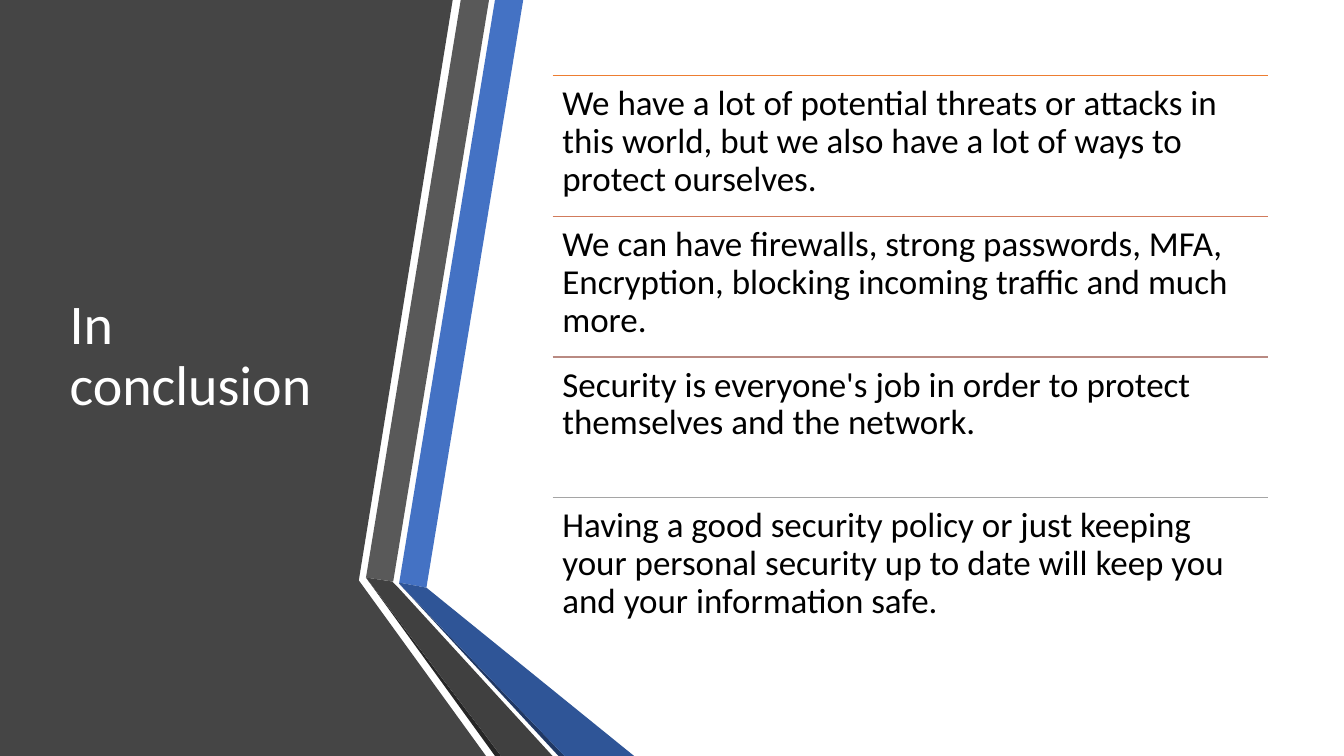
from pptx import Presentation
from pptx.dml.color import RGBColor
from pptx.enum.shapes import MSO_CONNECTOR
from pptx.enum.text import MSO_ANCHOR, MSO_AUTO_SIZE, PP_ALIGN
from pptx.oxml.ns import qn
from pptx.util import Inches, Pt
from lxml.etree import SubElement

COLORS = {
    "panel": "454545",
    "blue": "4472C4",
    "blue_fold": "2F5597",
    "blue_shade": "203864",
    "gray": "595959",
    "gray_fold": "404040",
    "gray_shade": "262626",
    "title": "FFFFFF",
    "text": "000000",
    "rule_1": "ED7D31",
    "rule_2": "D17B5C",
    "rule_3": "B98A82",
    "rule_4": "A5A5A5",
}

PANEL = [(0, 0), (4.49, 0), (3.56, 5.75), (3.56, 5.76), (4.82, 7.5), (0, 7.5)]

RIBBONS = [
    ("blue", [(0.33, 5.78), (0.6, 5.83), (1.56, 0), (1.28, 0)]),
    ("gray", [(1.22, 0), (0.94, 0), (0, 5.73), (0.27, 5.77)]),
    ("gray_shade", [(0, 5.73), (1.28, 7.5), (1.34, 7.5)]),
    ("blue_shade", [(0.33, 5.79), (1.91, 7.5), (1.97, 7.5)]),
    ("blue_fold", [(0.33, 5.79), (1.97, 7.5), (2.66, 7.5), (0.6, 5.83), (0.33, 5.78)]),
    ("gray_fold", [(1.85, 7.5), (0.32, 5.83), (0.26, 5.77), (0, 5.73), (1.34, 7.5)]),
]

CONCLUSIONS = [
    ("rule_1", "We have a lot of potential threats or attacks in this world, "
               "but we also have a lot of ways to protect ourselves."),
    ("rule_2", "We can have firewalls, strong passwords, MFA, Encryption, "
               "blocking incoming traffic and much more."),
    ("rule_3", "Security is everyone's job in order to protect themselves "
               "and the network."),
    ("rule_4", "Having a good security policy or just keeping your personal "
               "security up to date will keep you and your information safe."),
]


def color(name):
    return RGBColor.from_string(COLORS[name])


def write_text(shape, text, size, color_name, anchor, margin=None):
    frame = shape.text_frame
    frame.word_wrap = True
    frame.auto_size = MSO_AUTO_SIZE.NONE
    frame.vertical_anchor = anchor
    if margin is not None:
        frame.margin_left = frame.margin_right = Inches(margin)
        frame.margin_top = frame.margin_bottom = Inches(margin)
    paragraph = frame.paragraphs[0]
    paragraph.alignment = PP_ALIGN.LEFT
    paragraph.line_spacing = 0.9
    run = paragraph.add_run()
    run.text = text
    run.font.name = "Calibri"
    run.font.size = Pt(size)
    run.font.color.rgb = color(color_name)


def add_polygon(slide, left, top, points, color_name):
    corners = [(Inches(left + x), Inches(top + y)) for x, y in points]
    builder = slide.shapes.build_freeform(*corners[0])
    builder.add_line_segments(corners[1:], close=True)
    shape = builder.convert_to_shape()
    shape.shadow.inherit = False
    shape.fill.solid()
    shape.fill.fore_color.rgb = color(color_name)
    shape.line.fill.background()


def add_rule(slide, left, top, width, color_name):
    line = slide.shapes.add_connector(
        MSO_CONNECTOR.STRAIGHT,
        Inches(left), Inches(top), Inches(left + width), Inches(top),
    )
    line.line.color.rgb = color(color_name)
    line.line.width = Pt(1)
    SubElement(line._element.spPr, qn("a:effectLst"))


def add_ribbons(slide, left, top):
    for color_name, points in RIBBONS:
        add_polygon(slide, left, top, points, color_name)


def place_title(slide, left, top, width, height):
    title = slide.shapes.title
    title.left, title.top = Inches(left), Inches(top)
    title.width, title.height = Inches(width), Inches(height)
    write_text(title, "In conclusion", size=40, color_name="title",
               anchor=MSO_ANCHOR.MIDDLE)
    tree = slide.shapes._spTree
    tree.remove(title._element)
    tree.append(title._element)


def add_conclusions(slide, left, top, width, height):
    row_height = height / len(CONCLUSIONS)
    for index, (rule_color, text) in enumerate(CONCLUSIONS):
        row_top = top + index * row_height
        add_rule(slide, left, row_top, width, rule_color)
        box = slide.shapes.add_textbox(
            Inches(left), Inches(row_top), Inches(width), Inches(row_height))
        write_text(box, text, size=25, color_name="text",
                   anchor=MSO_ANCHOR.TOP, margin=0.1)


def main():
    presentation = Presentation()
    presentation.slide_width = Inches(13.33)
    presentation.slide_height = Inches(7.5)
    slide = presentation.slides.add_slide(presentation.slide_layouts[5])
    add_polygon(slide, 0, 0, PANEL, "panel")
    add_ribbons(slide, 3.63, 0)
    place_title(slide, 0.59, 0.75, 3.04, 5.58)
    add_conclusions(slide, 5.48, 0.75, 7.1, 5.58)
    presentation.save("out.pptx")


if __name__ == "__main__":
    main()
